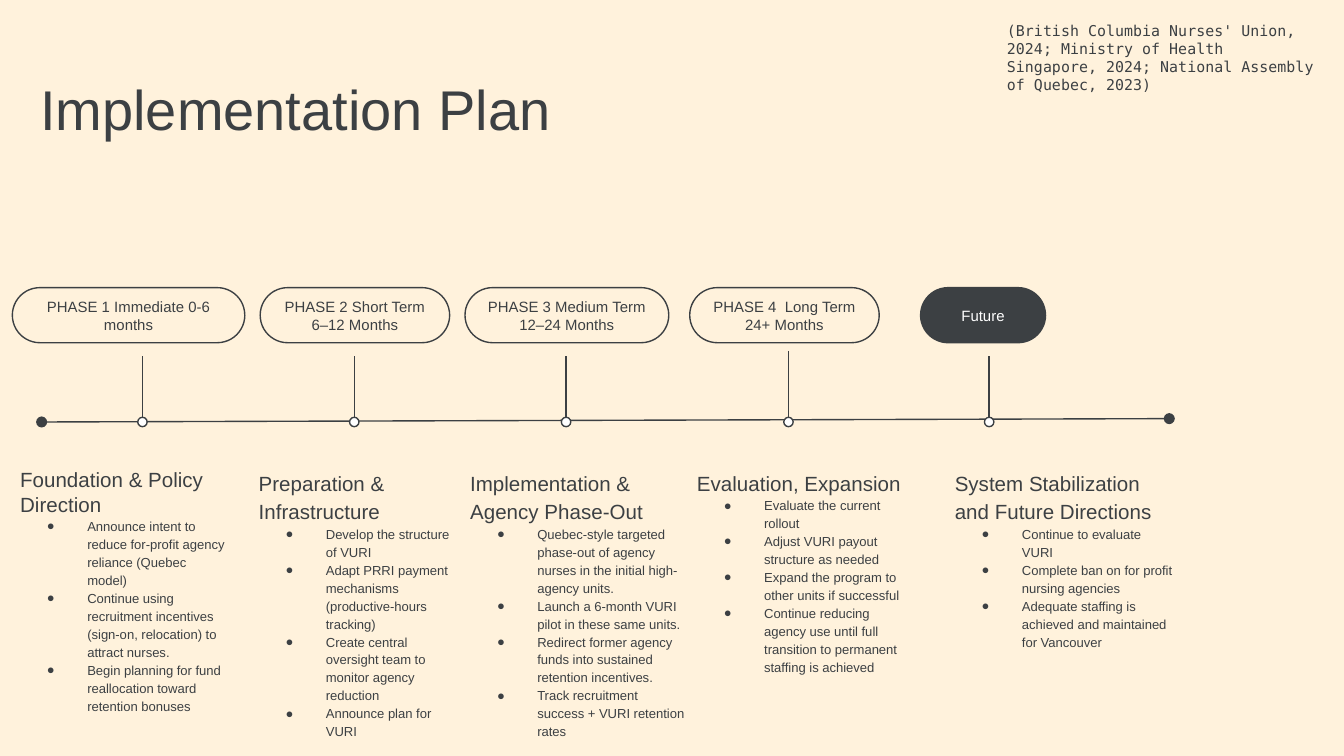
from dataclasses import dataclass

from lxml.etree import SubElement
from pptx import Presentation
from pptx.dml.color import RGBColor
from pptx.enum.shapes import MSO_CONNECTOR, MSO_SHAPE
from pptx.enum.text import MSO_ANCHOR as Anchor, MSO_AUTO_SIZE as AutoSize, PP_ALIGN as Align
from pptx.oxml.ns import qn
from pptx.slide import Slide
from pptx.util import Inches, Pt

CREAM = RGBColor(0xFF, 0xF2, 0xDC)
CHARCOAL = RGBColor(0x3C, 0x40, 0x43)
WHITE = RGBColor(0xFF, 0xFF, 0xFF)

CELL = 0.1  # inches per grid column and row
COLUMNS, ROWS = 100, 56.25
PILL_TOP, PILL_HEIGHT = 21.4, 4.1
STEM_BOTTOM, DOT_SIZE = 31.05, 0.7
LIST_TOP = 34.75


@dataclass
class Phase:
    label: str
    pill: tuple  # left, width
    stem: tuple  # column, top row
    heading: str
    box: tuple  # left, width, height
    points: list
    spacing: float = 1.15  # line spacing of the heading
    fill: RGBColor = CREAM
    color: RGBColor = CHARCOAL


PHASES = [
    Phase("PHASE 1 Immediate 0-6 months", (0.92, 17.3), (10.6, 26.5),
          "Foundation & Policy Direction", (0, 18.25, 19.3),
          ["Announce intent to reduce for-profit agency reliance (Quebec model)",
           "Continue using recruitment incentives (sign-on, relocation) to attract nurses.",
           "Begin planning for fund reallocation toward retention bonuses"],
          spacing=1.0),
    Phase("PHASE 2 Short Term 6–12 Months", (19.36, 14.1), (26.36, 26.5),
          "Preparation & Infrastructure", (17.75, 17.3, 21.5),
          ["Develop the structure of VURI",
           "Adapt PRRI payment mechanisms (productive-hours tracking)",
           "Create central oversight team to monitor agency reduction",
           "Announce plan for VURI"]),
    Phase("PHASE 3 Medium Term 12–24 Months", (34.6, 15.16), (42.12, 26.5),
          "Implementation & Agency Phase-Out", (33.48, 19.2, 14.9),
          ["Quebec-style targeted phase-out of agency nurses in the initial high-agency units.",
           "Launch a 6-month VURI pilot in these same units.",
           "Redirect former agency funds into sustained retention incentives.",
           "Track recruitment success + VURI retention rates"]),
    Phase("PHASE 4  Long Term 24+ Months", (51.32, 14.1), (58.67, 26.1),
          "Evaluation, Expansion", (50.36, 19.2, 14.9),
          ["Evaluate the current rollout",
           "Adjust VURI payout structure as needed",
           "Expand the program to other units if successful",
           "Continue reducing agency use until full transition to permanent staffing is achieved"]),
    Phase("Future", (68.5, 9.3), (73.6, 26.5),
          "System Stabilization and Future Directions", (69.54, 19.2, 14.9),
          ["Continue to evaluate VURI",
           "Complete ban on for profit nursing agencies",
           "Adequate staffing is achieved and maintained for Vancouver"],
          fill=CHARCOAL, color=WHITE),
]
CITATION = ("(British Columbia Nurses' Union, 2024; Ministry of Health Singapore, 2024; "
            "National Assembly of Quebec, 2023)")


def grid(*cells):
    return [Inches(cell * CELL) for cell in cells]


def add_bullet(paragraph):
    properties = paragraph._p.get_or_add_pPr()
    properties.set("marL", str(Inches(0.5)))
    properties.set("indent", str(Inches(-0.3)))
    color = SubElement(properties, qn("a:buClr"))
    SubElement(color, qn("a:srgbClr"), val=str(CHARCOAL))
    SubElement(properties, qn("a:buFont"), typeface="Arial")
    SubElement(properties, qn("a:buChar"), char="●")


@dataclass
class Painter:
    slide: Slide
    font: str = "Arial"
    line_width: float = 0.75

    def style(self, paragraph, size, color=CHARCOAL, font=None):
        for run in paragraph.runs:
            run.font.name = font or self.font
            run.font.size = Pt(size)
            run.font.color.rgb = color

    def set_frame(self, frame, insets, anchor=Anchor.TOP):
        frame.word_wrap = True
        frame.auto_size = AutoSize.NONE
        frame.vertical_anchor = anchor
        (frame.margin_left, frame.margin_top,
         frame.margin_right, frame.margin_bottom) = grid(*insets)

    def title(self, text, box):
        title = self.slide.shapes.title
        title.left, title.top, title.width, title.height = grid(*box)
        self.set_frame(title.text_frame, (0, 1, 0, 0))
        title.text_frame.text = text
        paragraph = title.text_frame.paragraphs[0]
        paragraph.alignment = Align.LEFT
        self.style(paragraph, 30)

    def text(self, text, box, size, font):
        frame = self.slide.shapes.add_textbox(*grid(*box)).text_frame
        self.set_frame(frame, (1, 1, 1, 1))
        frame.text = text
        self.style(frame.paragraphs[0], size, font=font)

    def bullet_list(self, phase):
        left, width, height = phase.box
        frame = self.slide.shapes.add_textbox(*grid(left, LIST_TOP, width, height)).text_frame
        self.set_frame(frame, (1.5, 0, 1.5, 0))
        frame.text = phase.heading
        heading = frame.paragraphs[0]
        heading.line_spacing = phase.spacing
        self.style(heading, 11)
        for point in phase.points:
            paragraph = frame.add_paragraph()
            paragraph.text = point
            paragraph.line_spacing = 1.15
            add_bullet(paragraph)
            self.style(paragraph, 7)

    def line(self, start, end, oval_ends=False):
        connector = self.slide.shapes.add_connector(
            MSO_CONNECTOR.STRAIGHT, *grid(*start, *end))
        connector.line.color.rgb = CHARCOAL
        connector.line.width = Pt(self.line_width)
        if oval_ends:
            outline = connector.line._get_or_add_ln()
            for tag in ("a:headEnd", "a:tailEnd"):
                SubElement(outline, qn(tag), type="oval")
        SubElement(connector._element.spPr, qn("a:effectLst"))

    def shape(self, kind, box, fill):
        shape = self.slide.shapes.add_shape(kind, *grid(*box))
        shape.shadow.inherit = False
        shape.fill.solid()
        shape.fill.fore_color.rgb = fill
        shape.line.color.rgb = CHARCOAL
        shape.line.width = Pt(self.line_width)
        return shape

    def pill(self, phase):
        left, width = phase.pill
        pill = self.shape(MSO_SHAPE.ROUNDED_RECTANGLE,
                          (left, PILL_TOP, width, PILL_HEIGHT), phase.fill)
        pill.adjustments[0] = 0.5
        self.set_frame(pill.text_frame, (1, 1, 1, 1), Anchor.MIDDLE)
        pill.text_frame.text = phase.label
        paragraph = pill.text_frame.paragraphs[0]
        paragraph.alignment = Align.CENTER
        self.style(paragraph, 8, phase.color)

    def dot(self, column):
        self.shape(MSO_SHAPE.OVAL,
                   (column - DOT_SIZE / 2, STEM_BOTTOM, DOT_SIZE, DOT_SIZE), WHITE)


def main():
    presentation = Presentation()
    presentation.slide_width, presentation.slide_height = grid(COLUMNS, ROWS)
    slide = presentation.slides.add_slide(presentation.slide_layouts.get_by_name("Title Only"))
    slide.background.fill.solid()
    slide.background.fill.fore_color.rgb = CREAM

    painter = Painter(slide)
    painter.title("Implementation Plan", (3, 4.55, 42.1, 9.7))
    painter.line((3.1, 31.4), (87, 31.15), oval_ends=True)
    for phase in PHASES:
        painter.bullet_list(phase)
    for phase in PHASES:
        column, top = phase.stem
        painter.line((column, top), (column, STEM_BOTTOM))
    for phase in PHASES:
        painter.pill(phase)
    for phase in PHASES:
        painter.dot(phase.stem[0])
    painter.text(CITATION, (73.94, 0.6, 25.3, 4.9), 8, "DejaVu Sans Mono")
    presentation.save("out.pptx")


if __name__ == "__main__":
    main()
